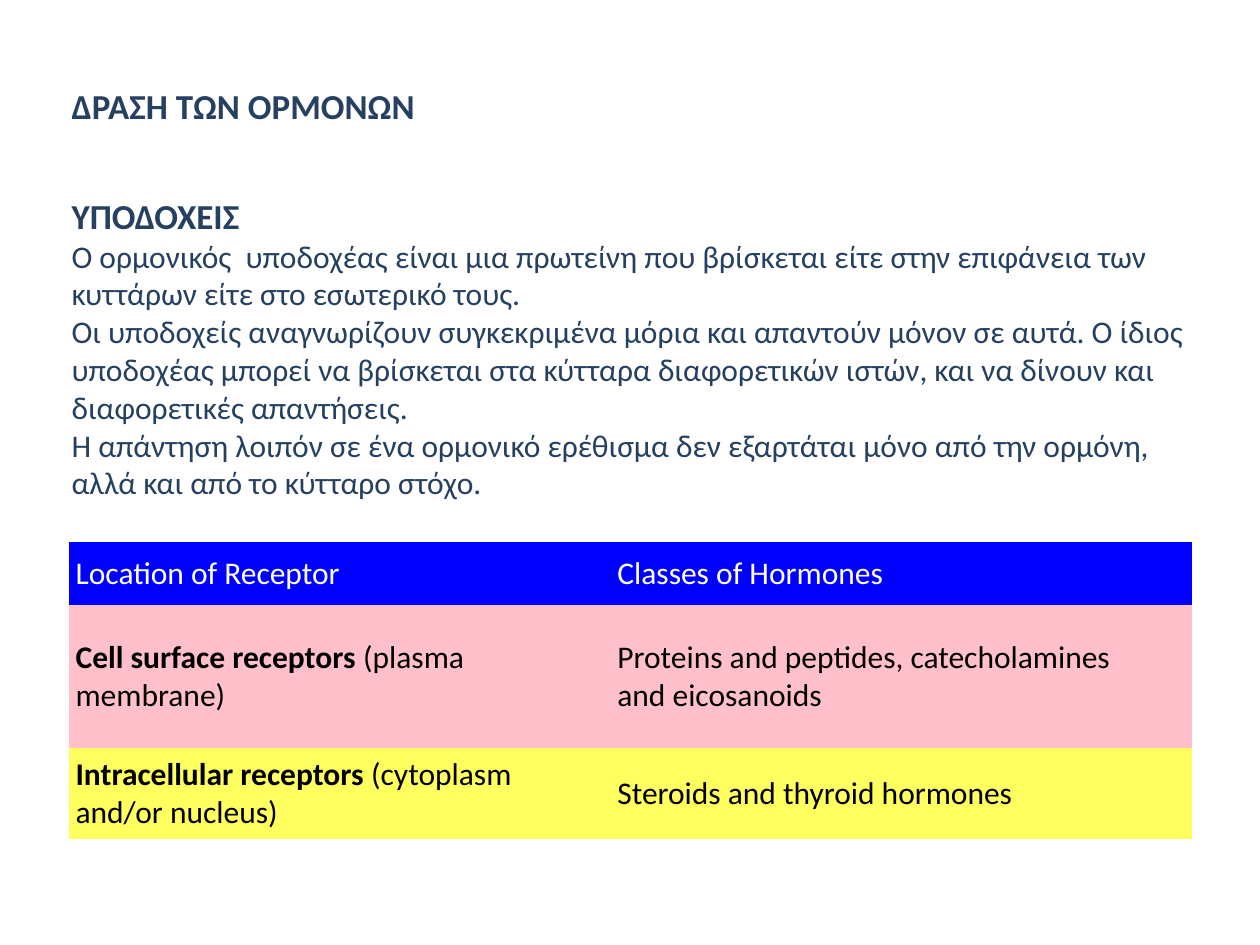
from pptx import Presentation
from pptx import util as u
from pptx.dml.color import RGBColor
from pptx.enum import text


def rgb(value):
    return RGBColor.from_string(value)


def add_run(p, words, size, color, bold=False):
    r = p.add_run()
    r.text = words
    r.font.name = "Calibri"
    r.font.size = u.Pt(size)
    r.font.bold = bold
    r.font.color.rgb = rgb(color)


prs = Presentation()
prs.slide_width, prs.slide_height = u.Inches(10), u.Inches(7.5)
s = prs.slides.add_slide(prs.slide_layouts[6])

# Headings and body text: words, size, bold, space before
paragraphs = [
    ("ΔΡΑΣΗ ΤΩΝ ΟΡΜΟΝΩΝ", 20, True, 0),
    ("ΥΠΟΔΟΧΕΙΣ", 20, True, 39),
    ("Ο ορμονικός  υποδοχέας είναι μια πρωτείνη που βρίσκεται είτε στην "
     "επιφάνεια των κυττάρων είτε στο εσωτερικό τους.", 18, False, 0),
    ("Οι υποδοχείς αναγνωρίζουν συγκεκριμένα μόρια και απαντούν μόνον σε αυτά. "
     "Ο ίδιος υποδοχέας μπορεί να βρίσκεται στα κύτταρα διαφορετικών ιστών, "
     "και να δίνουν και διαφορετικές απαντήσεις.", 18, False, 0),
    ("Η απάντηση λοιπόν σε ένα ορμονικό ερέθισμα δεν εξαρτάται μόνο από την "
     "ορμόνη, αλλά και από το κύτταρο στόχο.", 18, False, 0),
]
sp = s.shapes.add_textbox(u.Inches(0.47), u.Inches(0.62), u.Inches(9.14), u.Inches(3.7))
tf = sp.text_frame
tf.word_wrap = True
tf.auto_size = text.MSO_AUTO_SIZE.SHAPE_TO_FIT_TEXT
for i, (words, size, bold, before) in enumerate(paragraphs):
    p = tf.add_paragraph() if i else tf.paragraphs[0]
    p.space_before = u.Pt(before)
    add_run(p, words, size, "254061", bold)

# Receptor table: height, fill, font colour, cells as (words, bold) runs
rows = [
    (0.5, "0000FF", "FFFFFF",
     [[("Location of Receptor", False)], [("Classes of Hormones", False)], []]),
    (1.14, "FFC0CB", "000000",
     [[("Cell surface receptors", True), (" (plasma membrane)", False)],
      [("Proteins and peptides, catecholamines and eicosanoids", False)], []]),
    (0.72, "FFFF60", "000000",
     [[("Intracellular receptors", True), (" (cytoplasm and/or nucleus)", False)],
      [("Steroids and thyroid hormones", False)], []]),
]
widths = [4.3, 4.45, 0.16]
table = s.shapes.add_table(len(rows), len(widths), u.Inches(0.55), u.Inches(4.3),
                           u.Inches(sum(widths)), u.Inches(2.36)).table
table.first_row = table.horz_banding = False
# "No Style, No Grid" leaves the cells without borders
table._tbl.tblPr[0].text = "{2D5ABB26-0587-4C30-8999-92F81FD0307C}"
for col, width in zip(table.columns, widths):
    col.width = u.Inches(width)
for row, (height, fill, color, cells) in zip(table.rows, rows):
    row.height = u.Inches(height)
    for cell, runs in zip(row.cells, cells):
        cell.fill.solid()
        cell.fill.fore_color.rgb = rgb(fill)
        cell.vertical_anchor = text.MSO_ANCHOR.MIDDLE
        cell.margin_left = cell.margin_right = u.Inches(0.05)
        cell.margin_top = cell.margin_bottom = u.Inches(0.05)
        for words, bold in runs:
            add_run(cell.text_frame.paragraphs[0], words, 18, color, bold)

prs.save("out.pptx")
